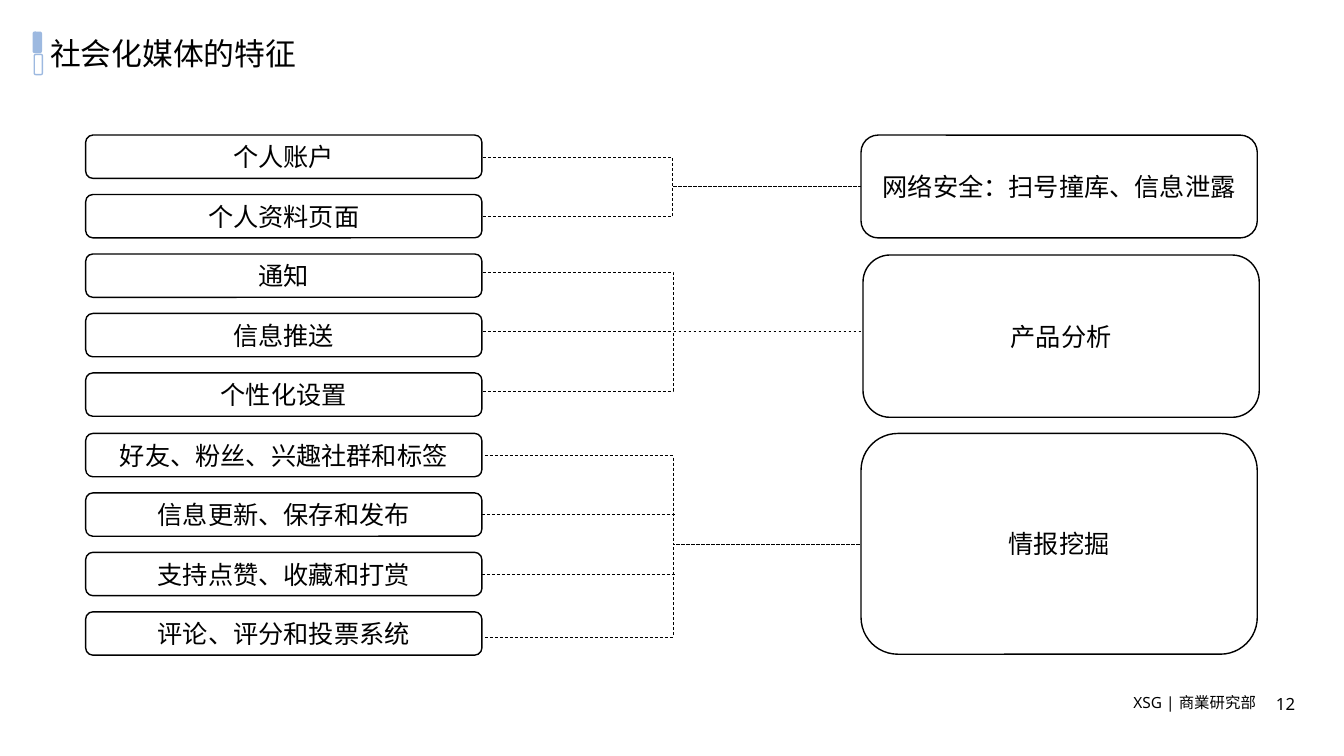
"""Build the slide that links social media features to their areas of use."""
from dataclasses import dataclass

from lxml.etree import SubElement
from pptx import Presentation
from pptx.dml.color import RGBColor
from pptx.enum.dml import MSO_LINE
from pptx.enum.shapes import MSO_CONNECTOR, MSO_SHAPE
from pptx.enum.text import MSO_ANCHOR, PP_ALIGN
from pptx.oxml.ns import qn
from pptx.shapes.autoshape import Shape
from pptx.shapes.connector import Connector
from pptx.slide import Slide
from pptx.util import Emu, Pt

PX = 9144
COLORS = {"ink": "000000", "paper": "FFFFFF", "accent": "9DB9E0"}
LABEL_FONT = "Noto Sans"
BOX_FONT = "Noto Sans CJK SC"
FEATURE_LEFT, FEATURE_TOP, FEATURE_HEIGHT = 85, 134, 43
BOX_WIDTH, ROW_STEP = 393, 59.1


@dataclass(frozen=True)
class Label:
    text: str
    left: int
    top: int
    width: int
    height: int
    size: int
    align: PP_ALIGN = PP_ALIGN.CENTER
    anchor: MSO_ANCHOR = MSO_ANCHOR.MIDDLE


@dataclass(frozen=True)
class Area:
    text: str
    left: int
    top: int
    height: int
    features: tuple[str, ...]
    line_left: int
    elbow_rows: tuple[int, int]
    hub_row: int


@dataclass(frozen=True)
class Branch:
    left: int
    row: int
    right: int


LABELS = (
    Label("XSG | 商業研究部", 1113, 683, 144, 29, 11, anchor=MSO_ANCHOR.TOP),
    Label("社会化媒体的特征", 40, 31, 1256, 43, 22, align=PP_ALIGN.LEFT),
    Label("12", 1234, 682, 82, 32, 12),
)
AREAS = (
    Area("网络安全：扫号撞库、信息泄露", 854, 134, 102,
         ("个人账户", "个人资料页面"), 479, (156, 215), 185),
    Area("产品分析", 856, 253, 161,
         ("通知", "信息推送", "个性化设置"), 479, (270, 388), 329),
    Area("情报挖掘", 854, 430, 219,
         ("好友、粉丝、兴趣社群和标签", "信息更新、保存和发布",
          "支持点赞、收藏和打赏", "评论、评分和投票系统"), 481, (452, 632), 540),
)
PUSH_BRANCH = Branch(479, 329, 667)
JOINED_FEATURES = ("信息更新、保存和发布", "支持点赞、收藏和打赏")
JOINED_RIGHT = 669


def px(value: int) -> Emu:
    """Turn px into EMU."""
    return Emu(value * PX)


def color(name: str) -> RGBColor:
    """Look up a named colour."""
    return RGBColor.from_string(COLORS[name])


def write(box: Shape, text: str, size: int, font: str,
          align: PP_ALIGN, anchor: MSO_ANCHOR) -> None:
    """Put one styled paragraph in a box."""
    frame = box.text_frame
    frame.word_wrap = True
    frame.vertical_anchor = anchor
    para = frame.paragraphs[0]
    para.text = text
    para.alignment = align
    para.font.size = Pt(size)
    para.font.name = font
    para.font.color.rgb = color("ink")
    defaults = para._p.pPr.find(qn("a:defRPr"))
    SubElement(defaults, qn("a:ea"), typeface=font)


def add_label(page: Slide, label: Label) -> None:
    """Add a free-standing text."""
    box = page.shapes.add_textbox(
        px(label.left), px(label.top), px(label.width), px(label.height))
    write(box, label.text, label.size, LABEL_FONT, label.align, label.anchor)


def add_rounded(page: Slide, left: int, top: int, width: int, height: int,
                line: str, fill: str | None = None) -> Shape:
    """Add an outlined rounded rectangle."""
    box = page.shapes.add_shape(
        MSO_SHAPE.ROUNDED_RECTANGLE, px(left), px(top), px(width), px(height))
    box.shadow.inherit = False
    if fill:
        box.fill.solid()
        box.fill.fore_color.rgb = color(fill)
    else:
        box.fill.background()
    box.line.color.rgb = color(line)
    box.line.width = Pt(1)
    return box


def add_box(page: Slide, text: str, left: int, top: int, height: int) -> Shape:
    """Add a captioned box."""
    box = add_rounded(page, left, top, BOX_WIDTH, height, "ink")
    write(box, text, 18, BOX_FONT, PP_ALIGN.CENTER, MSO_ANCHOR.MIDDLE)
    return box


def add_dashed(page: Slide, kind: MSO_CONNECTOR, left: int, start_row: int,
               right: int, end_row: int) -> Connector:
    """Add a thin dashed connector."""
    link = page.shapes.add_connector(
        kind, px(left), px(start_row), px(right), px(end_row))
    link.line.color.rgb = color("ink")
    link.line.width = Pt(0.5)
    link.line.dash_style = MSO_LINE.DASH
    SubElement(link._element.spPr, qn("a:effectLst"))
    return link


def add_branch(page: Slide, branch: Branch) -> Connector:
    """Add a level dashed line."""
    return add_dashed(page, MSO_CONNECTOR.STRAIGHT,
                      branch.left, branch.row, branch.right, branch.row)


def join_feature(page: Slide, box: Shape) -> None:
    """Run a level line from the right side of a feature box."""
    middle = (box.top + box.height // 2) // PX
    link = add_branch(page, Branch(FEATURE_LEFT + BOX_WIDTH, middle, JOINED_RIGHT))
    link.begin_connect(box, 3)
    link.end_y = link.begin_y


def main() -> None:
    """Draw the slide and save the deck."""
    deck = Presentation()
    deck.slide_width, deck.slide_height = px(1333), px(750)
    page = deck.slides.add_slide(deck.slide_layouts[6])
    add_rounded(page, 33, 32, 8, 20, "accent", "accent")
    add_rounded(page, 34, 54, 8, 20, "accent", "paper")
    for label in LABELS:
        add_label(page, label)

    features = [text for area in AREAS for text in area.features]
    boxes = {
        text: add_box(page, text, FEATURE_LEFT,
                      round(FEATURE_TOP + ROW_STEP * row), FEATURE_HEIGHT)
        for row, text in enumerate(features)
    }
    for area in AREAS:
        add_box(page, area.text, area.left, area.top, area.height)
        for row in area.elbow_rows:
            add_dashed(page, MSO_CONNECTOR.ELBOW,
                       area.line_left, row, area.left, area.hub_row)
    add_branch(page, PUSH_BRANCH)
    for text in JOINED_FEATURES:
        join_feature(page, boxes[text])
    deck.save("out.pptx")


if __name__ == "__main__":
    main()
